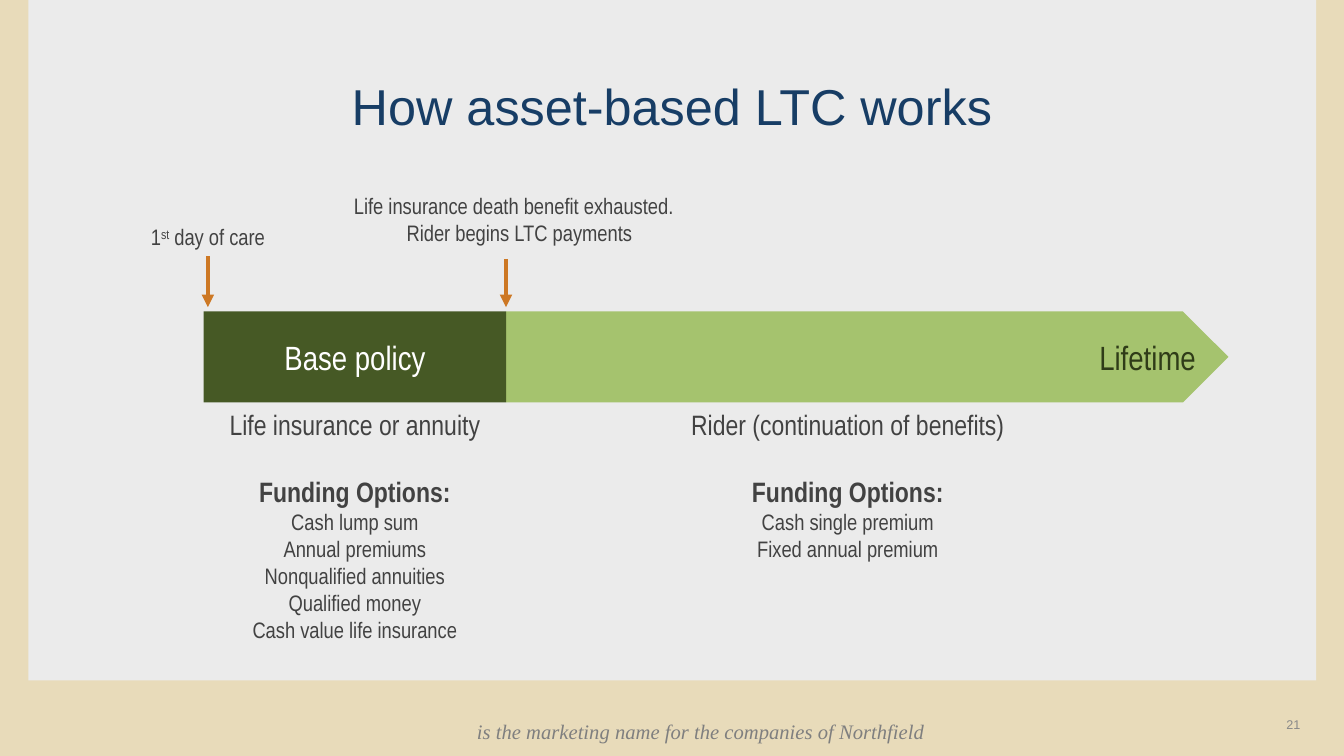
import pptx
import pptx.util
import pptx.dml.color
import pptx.enum.shapes
import pptx.enum.text
import pptx.oxml.ns
import lxml.etree

Pt = pptx.util.Pt
ALIGN = pptx.enum.text.PP_ALIGN
ANCHOR = pptx.enum.text.MSO_ANCHOR
SHAPE = pptx.enum.shapes.MSO_SHAPE
COLORS = {
    "background": "E8DBBA",
    "panel": "EBEBEB",
    "title": "173D65",
    "body": "424242",
    "base": "465925",
    "base_text": "FFFFFF",
    "rider": "A5C36E",
    "rider_text": "2F3C18",
    "arrow": "CD7824",
    "footer": "7F7F7F",
    "number": "898989",
}
BAR_HEIGHT = 65
BASE_WIDTH = 216
ARROW_BOTTOM = 219.4


def color(name):
    return pptx.dml.color.RGBColor.from_string(COLORS[name])


def format_paragraph(paragraph, size, color_name, font="Arial Narrow",
                     align=ALIGN.CENTER, bold=False, italic=False):
    paragraph.alignment = align
    for run in paragraph.runs:
        run.font.name = font
        run.font.size = Pt(size)
        run.font.bold = bold
        run.font.italic = italic
        run.font.color.rgb = color(color_name)


def add_text(slide, box, text, size, color_name, **style):
    shape = slide.shapes.add_textbox(*map(Pt, box))
    shape.text_frame.word_wrap = True
    shape.text_frame.text = text
    for paragraph in shape.text_frame.paragraphs:
        format_paragraph(paragraph, size, color_name, **style)
    return shape.text_frame


def add_block(slide, kind, box, fill):
    shape = slide.shapes.add_shape(kind, *map(Pt, box))
    shape.shadow.inherit = False
    shape.fill.solid()
    shape.fill.fore_color.rgb = color(fill)
    shape.line.fill.background()
    return shape


def add_arrow(slide, x, top):
    connector = slide.shapes.add_connector(
        pptx.enum.shapes.MSO_CONNECTOR.STRAIGHT,
        Pt(x), Pt(top), Pt(x), Pt(ARROW_BOTTOM))
    connector.line.color.rgb = color("arrow")
    connector.line.width = Pt(3)
    qualified = pptx.oxml.ns.qn
    lxml.etree.SubElement(connector.line._get_or_add_ln(),
                          qualified("a:tailEnd"), type="triangle")
    lxml.etree.SubElement(connector._element.spPr, qualified("a:effectLst"))


def add_frame(slide):
    slide.background.fill.solid()
    slide.background.fill.fore_color.rgb = color("background")
    panel = add_block(slide, SHAPE.RECTANGLE, (20.2, 0, 920, 486), "panel")
    slide.shapes.title._element.addprevious(panel._element)
    add_text(slide, (333.6, 510, 475, 25),
             "is the marketing name for the companies of Northfield",
             14.7, "footer", font="Times New Roman",
             align=ALIGN.LEFT, italic=True)
    number = add_text(slide, (823.7, 497.7, 112.3, 28.8), "21", 9, "number",
                      font="Arial", align=ALIGN.RIGHT)
    number.vertical_anchor = ANCHOR.BOTTOM


def add_title(slide, box):
    title = slide.shapes.title
    title.left, title.top, title.width, title.height = map(Pt, box)
    title.text_frame.text = "How asset-based LTC works"
    title.text_frame.vertical_anchor = ANCHOR.MIDDLE
    format_paragraph(title.text_frame.paragraphs[0], 36, "title", font="Arial")


def add_bar(slide, left, top, width):
    split = left + BASE_WIDTH
    segments = [
        (SHAPE.PENTAGON, split, width - BASE_WIDTH, "rider", "Lifetime", ALIGN.RIGHT),
        (SHAPE.RECTANGLE, left, BASE_WIDTH, "base", "Base policy", ALIGN.CENTER),
    ]
    for kind, x, segment_width, name, text, align in segments:
        shape = add_block(slide, kind, (x, top, segment_width, BAR_HEIGHT), name)
        shape.text_frame.text = text
        shape.text_frame.vertical_anchor = ANCHOR.MIDDLE
        format_paragraph(shape.text_frame.paragraphs[0], 24,
                         name + "_text", align=align)


def add_funding(slide, box, heading, options):
    lines = [heading, "Funding Options:"] + options
    frame = add_text(slide, box, "\n".join(lines), 16, "body")
    heading_paragraph, label_paragraph = frame.paragraphs[:2]
    format_paragraph(heading_paragraph, 20, "body")
    format_paragraph(label_paragraph, 20, "body", bold=True)
    label_paragraph.space_before = Pt(24)


def add_care_start(slide, box, arrow_x):
    frame = add_text(slide, box, "1", 16, "body")
    paragraph = frame.paragraphs[0]
    ordinal = paragraph.add_run()
    ordinal.text = "st"
    paragraph.add_run().text = " day of care"
    format_paragraph(paragraph, 16, "body")
    ordinal._r.get_or_add_rPr().set("baseline", "30000")
    add_arrow(slide, arrow_x, box[1] + box[3])


def add_rider_start(slide, box, arrow_x):
    frame = add_text(slide, box, "Life insurance death benefit exhausted.\n"
                     "Rider begins LTC payments", 16, "body")
    for paragraph, right_indent in zip(frame.paragraphs, (8, 0)):
        properties = paragraph._p.get_or_add_pPr()
        properties.set("marL", "0")
        properties.set("marR", str(Pt(right_indent)))
    add_arrow(slide, arrow_x, box[1] + box[3] + 5)


def build_timeline_slide(presentation):
    slide = presentation.slides.add_slide(presentation.slide_layouts[5])
    bar_left, bar_top = 145.5, 222.5
    bar_bottom = bar_top + BAR_HEIGHT
    add_frame(slide)
    add_title(slide, (48, 37.5, 864, 75.5))
    add_funding(slide, (130.4, bar_bottom, 246.2, 177),
                "Life insurance or annuity",
                ["Cash lump sum", "Annual premiums", "Nonqualified annuities",
                 "Qualified money", "Cash value life insurance"])
    add_funding(slide, (449.7, bar_bottom, 311.8, 119),
                "Rider (continuation of benefits)",
                ["Cash single premium", "Fixed annual premium"])
    add_bar(slide, bar_left, bar_top, 732)
    add_care_start(slide, (25.4, 156.2, 246.2, 26.7), bar_left + 3)
    add_rider_start(slide, (232.8, 134, 276.5, 46), bar_left + BASE_WIDTH)


def main():
    presentation = pptx.Presentation()
    presentation.slide_width = Pt(960)
    presentation.slide_height = Pt(540)
    build_timeline_slide(presentation)
    presentation.save("out.pptx")


if __name__ == "__main__":
    main()
